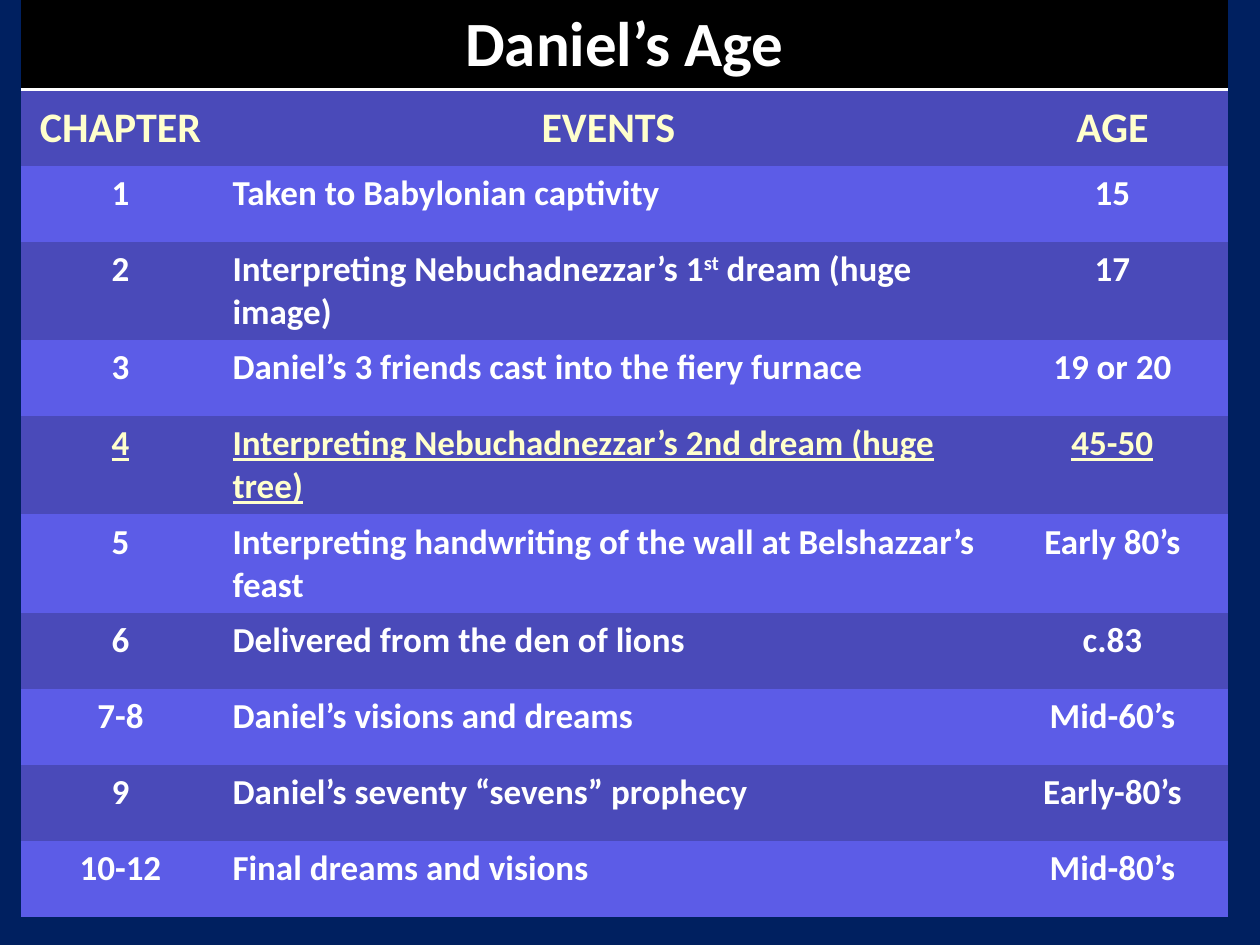
"""Build the slide that lists Daniel's age at each chapter."""
from lxml.etree import SubElement
from pptx import Presentation
from pptx.dml.color import RGBColor
from pptx.enum.text import MSO_ANCHOR, PP_ALIGN
from pptx.oxml import parse_xml
from pptx.oxml.ns import nsdecls, qn
from pptx.util import Pt

PX = 914400 // 126
COLORS = {
    "page": "002060", "title": "000000", "dark": "4A4AB9",
    "light": "5C5CE7", "text": "FFFFFF", "accent": "FFFFCC",
}
TITLE = "Daniel’s Age"
HEADINGS = ("CHAPTER", "EVENTS", "AGE")
EVENTS = [
    ("1", ["Taken to Babylonian captivity"], "15"),
    ("2", ["Interpreting Nebuchadnezzar’s 1", "st", " dream (huge image)"], "17"),
    ("3", ["Daniel’s 3 friends cast into the fiery furnace"], "19 or 20"),
    ("4", ["Interpreting Nebuchadnezzar’s 2nd dream (huge tree)"], "45-50"),
    ("5", ["Interpreting handwriting of the wall at Belshazzar’s feast"], "Early 80’s"),
    ("6", ["Delivered from the den of lions"], "c.83"),
    ("7-8", ["Daniel’s visions and dreams"], "Mid-60’s"),
    ("9", ["Daniel’s seventy “sevens” prophecy"], "Early-80’s"),
    ("10-12", ["Final dreams and visions"], "Mid-80’s"),
]
TWO_LINE_CHAPTERS = {"2", "4", "5"}
HIGHLIGHTED_CHAPTER = "4"
COLUMN_WIDTHS = (199, 777, 231)
TITLE_HEIGHT, ROW_HEIGHT, TALL_ROW_HEIGHT = 86, 76, 95
TABLE_LEFT = 21
NO_STYLE = "{2D5ABB26-0587-4C30-8999-92F81FD0307C}"


def rgb(name):
    return RGBColor.from_string(COLORS[name])


def fill_cell(cell, parts, fill, size, color="text", centered=True, underline=False):
    cell.fill.solid()
    cell.fill.fore_color.rgb = rgb(fill)
    para = cell.text_frame.paragraphs[0]
    para.alignment = PP_ALIGN.CENTER if centered else PP_ALIGN.LEFT
    for part in parts:
        span = para.add_run()
        span.text = part
        font = span.font
        font.name, font.size, font.bold = "Calibri", Pt(size), True
        font.underline = underline
        font.color.rgb = rgb(color)
        if part == "st":
            span._r.get_or_add_rPr().set("baseline", "30000")


def add_bottom_border(cell, color, points):
    line = parse_xml(f'<a:lnB {nsdecls("a")} w="{Pt(points)}"/>')
    solid = SubElement(line, qn("a:solidFill"))
    SubElement(solid, qn("a:srgbClr"), val=COLORS[color])
    cell._tc.get_or_add_tcPr().insert(0, line)


def add_age_table(page):
    heights = [TITLE_HEIGHT, ROW_HEIGHT] + [
        TALL_ROW_HEIGHT if chapter in TWO_LINE_CHAPTERS else ROW_HEIGHT
        for chapter, _, _ in EVENTS
    ]
    frame = page.shapes.add_table(
        len(heights), len(COLUMN_WIDTHS), TABLE_LEFT * PX, 0,
        sum(COLUMN_WIDTHS) * PX, sum(heights) * PX,
    )
    table = frame.table
    table.first_row = table.horz_banding = False
    table._tbl.tblPr.find(qn("a:tableStyleId")).text = NO_STYLE
    for column, width in zip(table.columns, COLUMN_WIDTHS):
        column.width = width * PX
    for row, height in zip(table.rows, heights):
        row.height = height * PX

    title = table.cell(0, 0)
    title.merge(table.cell(0, 2))
    fill_cell(title, [TITLE], "title", 36)
    for cell in table.rows[0].cells:
        add_bottom_border(cell, "text", 2)

    for cell, heading in zip(table.rows[1].cells, HEADINGS):
        fill_cell(cell, [heading], "dark", 24, "accent")
        cell.vertical_anchor = MSO_ANCHOR.MIDDLE

    for index, (chapter, event, age) in enumerate(EVENTS):
        fill = "dark" if index % 2 else "light"
        highlighted = chapter == HIGHLIGHTED_CHAPTER
        color = "accent" if highlighted else "text"
        for column, parts in enumerate(([chapter], event, [age])):
            fill_cell(table.cell(index + 2, column), parts, fill, 20, color,
                      centered=column != 1, underline=highlighted)


def main():
    deck = Presentation()
    deck.slide_width, deck.slide_height = 1260 * PX, 945 * PX
    page = deck.slides.add_slide(deck.slide_layouts[6])
    page.background.fill.solid()
    page.background.fill.fore_color.rgb = rgb("page")
    add_age_table(page)
    deck.save("out.pptx")


if __name__ == "__main__":
    main()
